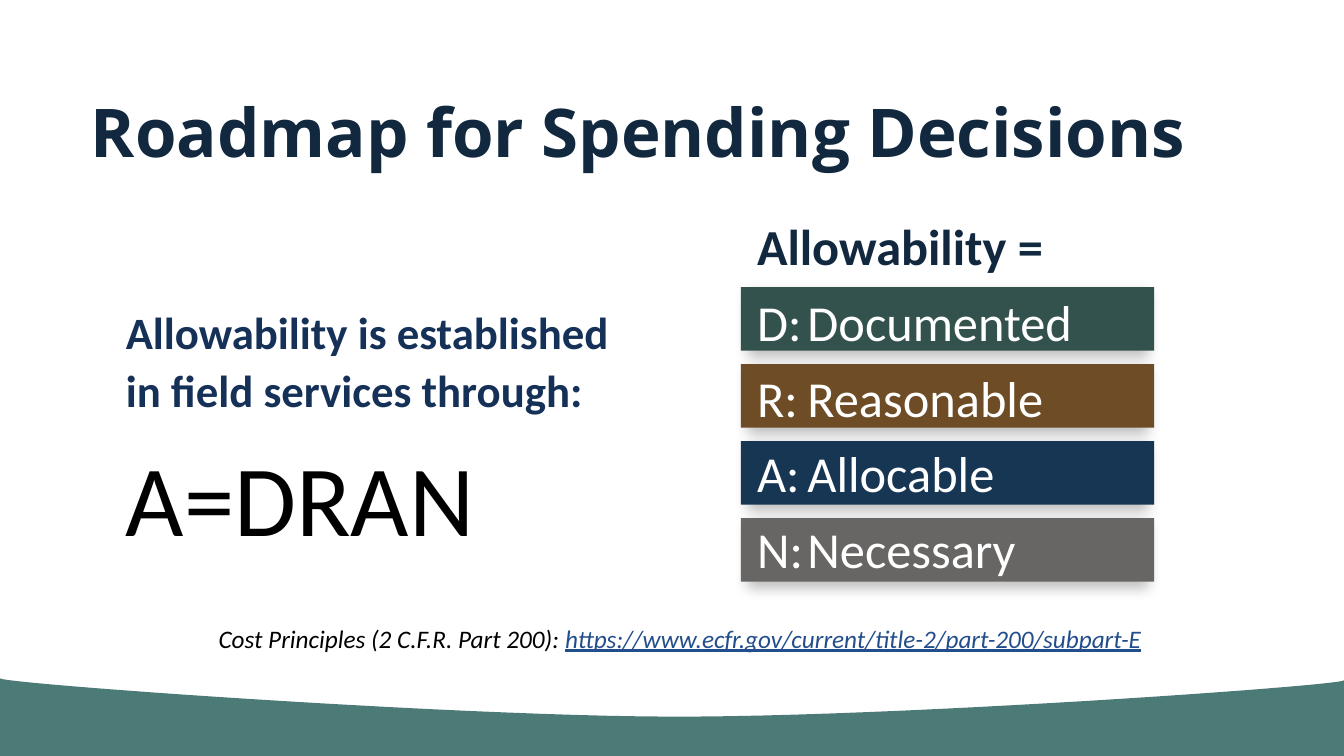
from dataclasses import dataclass

from lxml.etree import SubElement
from pptx import Presentation
from pptx.dml.color import RGBColor
from pptx.enum.shapes import MSO_SHAPE
from pptx.enum.text import MSO_ANCHOR, MSO_AUTO_SIZE, PP_ALIGN
from pptx.oxml.ns import qn
from pptx.util import Inches, Pt

WIDE, HIGH = Inches(13.33), Inches(7.5)
COLS, ROWS = 160, 90

WHITE = RGBColor(0xFF, 0xFF, 0xFF)
BLACK = RGBColor(0x00, 0x00, 0x00)
TEAL = RGBColor(0x4C, 0x7A, 0x76)
GREEN = RGBColor(0x33, 0x52, 0x4E)
BROWN = RGBColor(0x6D, 0x4C, 0x26)
BLUE = RGBColor(0x17, 0x36, 0x54)
GREY = RGBColor(0x68, 0x66, 0x65)
NAVY = RGBColor(0x11, 0x28, 0x3F)
INDIGO = RGBColor(0x16, 0x31, 0x58)
LINK = RGBColor(0x23, 0x4E, 0x8C)

Point = tuple[float, float]


@dataclass(frozen=True)
class Box:
    """A place on the grid, in columns and rows."""
    col: float
    row: float
    cols: float
    rows: float

    def place(self) -> tuple[int, int, int, int]:
        return x(self.col), y(self.row), x(self.cols), y(self.rows)


@dataclass(frozen=True)
class Run:
    text: str
    size: float
    color: RGBColor
    bold: bool = False
    italic: bool = False
    underline: bool = False
    name: str = "Calibri"


@dataclass(frozen=True)
class Term:
    word: str
    color: RGBColor


TERMS = [Term("Documented", GREEN), Term("Reasonable", BROWN),
         Term("Allocable", BLUE), Term("Necessary", GREY)]
BAR = Box(88.2, 34.2, 49.2, 7.56)
PITCH = 9.16

TITLE = Box(9.6, 4.8, 141.12, 16.2)
LEAD = Box(13.8, 35.28, 60.48, 31.2)
LIST = Box(88.92, 24.48, 57.24, 47.52)
NOTE = Box(24.84, 73.56, 112.56, 8.52)
FLOOR = Box(0, 88.8, COLS, 1.2)

WAVE: list[list[Point]] = [
    [(0, 80.76), (0, 81.36), (52.8, 85.2), (79.44, 85.32)],
    [(79.44, 85.32), (106.2, 85.44), (160, 81.6), (160, 81)],
]
STEPS = 24


def x(cols: float) -> int:
    return round(WIDE * cols / COLS)


def y(rows: float) -> int:
    return round(HIGH * rows / ROWS)


def curve(knots: list[Point]) -> list[Point]:
    """Sample a cubic Bezier curve, leaving out its first point."""
    points = []
    for step in range(1, STEPS + 1):
        t = step / STEPS
        parts = ((1 - t) ** 3, 3 * t * (1 - t) ** 2, 3 * t * t * (1 - t), t ** 3)
        points.append(tuple(sum(p * k[axis] for p, k in zip(parts, knots))
                            for axis in (0, 1)))
    return points


def paint(shape, color: RGBColor) -> None:
    shape.shadow.inherit = False
    shape.fill.solid()
    shape.fill.fore_color.rgb = color
    shape.line.fill.background()


def add_rect(shapes, box: Box, color: RGBColor):
    rect = shapes.add_shape(MSO_SHAPE.RECTANGLE, *box.place())
    paint(rect, color)
    return rect


def add_wave(shapes) -> None:
    points = [p for knots in WAVE for p in curve(knots)]
    points += [(COLS, FLOOR.row + 0.4), (0, FLOOR.row + 0.4)]
    start = WAVE[0][0]
    pen = shapes.build_freeform(x(start[0]), y(start[1]), scale=1.0)
    pen.add_line_segments([(x(col), y(row)) for col, row in points])
    paint(pen.convert_to_shape(), TEAL)


def cast(shape) -> None:
    """Give the shape a soft shadow below, narrower than itself."""
    effects = shape.element.spPr.find(qn("a:effectLst"))
    shade = SubElement(effects, qn("a:outerShdw"), blurRad="127000",
                       dist="50800", dir="5400000", sx="97000", sy="100000",
                       algn="t", rotWithShape="0")
    tone = SubElement(shade, qn("a:srgbClr"), val=str(BLACK))
    SubElement(tone, qn("a:alpha"), val="25000")


def write(shape, box: Box, lines: list[list[Run]], **form) -> None:
    """Move a text shape into its box and fill it, one paragraph a line."""
    shape.left, shape.top, shape.width, shape.height = box.place()
    frame = shape.text_frame
    frame.word_wrap = True
    frame.auto_size = MSO_AUTO_SIZE.NONE
    frame.vertical_anchor = form.pop("anchor", MSO_ANCHOR.TOP)
    form = {"alignment": PP_ALIGN.LEFT, "space_before": Pt(0), **form}
    for index, runs in enumerate(lines):
        para = frame.add_paragraph() if index else frame.paragraphs[0]
        props = para._p.get_or_add_pPr()
        props.set("marL", "0")
        props.set("indent", "0")
        SubElement(props, qn("a:buNone"))
        for key, value in form.items():
            setattr(para, key, value)
        for item in runs:
            run = para.add_run()
            run.text = item.text
            run.font.color.rgb = item.color
            looks = {"size": Pt(item.size), "name": item.name, "bold": item.bold,
                     "italic": item.italic, "underline": item.underline}
            for key, value in looks.items():
                setattr(run.font, key, value)


def main() -> None:
    deck = Presentation()
    deck.slide_width, deck.slide_height = WIDE, HIGH
    slide = deck.slides.add_slide(deck.slide_layouts[1])
    shapes = slide.shapes
    title, body = shapes.title, slide.placeholders[1]

    add_rect(shapes, FLOOR, TEAL)
    add_wave(shapes)
    for index, term in enumerate(TERMS):
        box = Box(BAR.col, BAR.row + index * PITCH, BAR.cols, BAR.rows)
        cast(add_rect(shapes, box, term.color))

    for holder in (title, body):
        holder.element.getparent().append(holder.element)

    loose = {"line_spacing": 1.07, "space_after": Pt(8)}
    write(title, TITLE,
          [[Run("Roadmap for Spending Decisions", 48, NAVY, bold=True,
                name="Open Sans")]],
          anchor=MSO_ANCHOR.BOTTOM, line_spacing=1.02)
    write(shapes.add_textbox(*LEAD.place()), LEAD,
          [[Run("Allowability is established in field services through:", 32,
                INDIGO, bold=True)],
           [Run("A=DRAN", 72, BLACK)]], **loose)
    write(body, LIST,
          [[Run("Allowability =", 36, NAVY, bold=True)]]
          + [[Run(f"{term.word[0]}:\t{term.word}", 36, WHITE)] for term in TERMS],
          **loose)
    write(shapes.add_textbox(*NOTE.place()), NOTE,
          [[Run("Cost Principles (2 C.F.R. Part 200): ", 18, BLACK, italic=True),
            Run("https://www.ecfr.gov/current/title-2/part-200/subpart-E", 18,
                LINK, italic=True, underline=True)]])
    deck.save("out.pptx")


if __name__ == "__main__":
    main()
